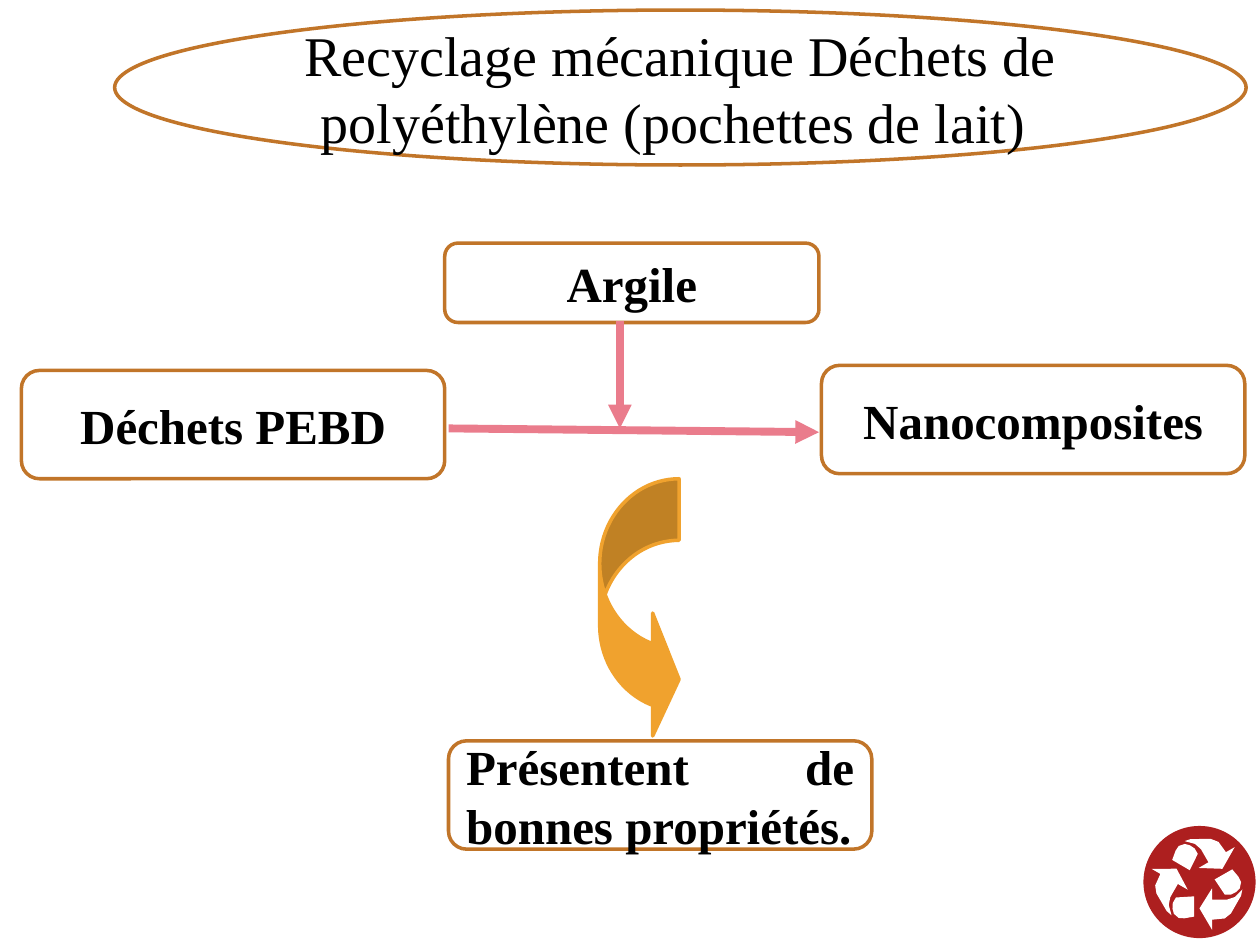
import math
from dataclasses import dataclass

import pptx
import pptx.dml.color
import pptx.enum.shapes
import pptx.enum.text
import pptx.oxml
import pptx.util
from pptx.util import Inches

SHAPE = pptx.enum.shapes.MSO_SHAPE
ALIGN = pptx.enum.text.PP_ALIGN


@dataclass(frozen=True)
class Theme:
    font: str = "Times New Roman"
    title_size: int = 32
    box_size: int = 28
    outline_width: float = 2
    arrow_width: float = 4.5
    text: str = "000000"
    paper: str = "FFFFFF"
    outline: str = "C17529"
    arrow: str = "EA7C8C"
    curve: str = "F0A22E"
    badge: str = "AD1F1F"


def rgb(value):
    return pptx.dml.color.RGBColor.from_string(value)


class SlideBuilder:
    def __init__(self, slide, theme):
        self.s = slide
        self.theme = theme

    def paint(self, sp, fill, line=None):
        sp.shadow.inherit = False
        sp.fill.solid()
        sp.fill.fore_color.rgb = rgb(fill)
        if line:
            sp.line.color.rgb = rgb(line)
            sp.line.width = pptx.util.Pt(self.theme.outline_width)
        else:
            sp.line.fill.background()
        return sp

    def shape(self, kind, x, y, w, h, fill, line=None):
        sp = self.s.shapes.add_shape(kind, Inches(x), Inches(y), Inches(w), Inches(h))
        return self.paint(sp, fill, line)

    def label(self, kind, x, y, w, h, text, size, bold=True, align=ALIGN.CENTER):
        sp = self.shape(kind, x, y, w, h, self.theme.paper, self.theme.outline)
        tf = sp.text_frame
        tf.word_wrap = True
        tf.vertical_anchor = pptx.enum.text.MSO_ANCHOR.MIDDLE
        p = tf.paragraphs[0]
        p.alignment = align
        r = p.add_run()
        r.text = text
        r.font.name = self.theme.font
        r.font.size = pptx.util.Pt(size)
        r.font.bold = bold
        r.font.color.rgb = rgb(self.theme.text)
        return sp

    def box(self, x, y, w, h, text, align=ALIGN.CENTER):
        return self.label(SHAPE.ROUNDED_RECTANGLE, x, y, w, h, text,
                          self.theme.box_size, align=align)

    def arrow(self, x1, y1, x2, y2):
        line = self.s.shapes.add_connector(
            pptx.enum.shapes.MSO_CONNECTOR.STRAIGHT,
            Inches(x1), Inches(y1), Inches(x2), Inches(y2))
        line.line.color.rgb = rgb(self.theme.arrow)
        line.line.width = pptx.util.Pt(self.theme.arrow_width)
        ns = 'xmlns:a="http://schemas.openxmlformats.org/drawingml/2006/main"'
        line.line._get_or_add_ln().append(
            pptx.oxml.parse_xml(f'<a:tailEnd {ns} type="triangle"/>'))
        line._element.spPr.append(pptx.oxml.parse_xml(f'<a:effectLst {ns}/>'))
        return line

    def polygon(self, points, fill):
        start, *rest = [(Inches(x), Inches(y)) for x, y in points]
        builder = self.s.shapes.build_freeform(*start)
        builder.add_line_segments(rest, close=True)
        return self.paint(builder.convert_to_shape(), fill)

    def recycling_badge(self, cx, cy, diameter):
        self.shape(SHAPE.OVAL, cx - diameter / 2, cy - diameter / 2,
                   diameter, diameter, self.theme.badge)
        # One arrow and its fold, relative to the centre, turned three times
        head = [(0, .21), (.1, .05), (.1, .14), (.16, .14), (.22, .14), (.28, .12),
                (.34, .06), (.33, .11), (.29, .18), (.25, .25), (.2, .29), (.1, .3),
                (.1, .38)]
        fold = [(.12, -.02), (.26, -.1), (.31, -.04), (.33, 0), (.32, .05),
                (.29, .08), (.25, .1), (.2, .1)]
        for turn in range(3):
            c, s = math.cos(turn * math.tau / 3), math.sin(turn * math.tau / 3)
            for part in (head, fold):
                self.polygon([(cx + x * c - y * s, cy + x * s + y * c)
                              for x, y in part], self.theme.paper)


def main():
    prs = pptx.Presentation()
    prs.slide_width, prs.slide_height = Inches(10), Inches(7.5)
    theme = Theme()
    b = SlideBuilder(prs.slides.add_slide(prs.slide_layouts[6]), theme)

    # Title
    b.label(SHAPE.OVAL, 0.91, 0.08, 8.98, 1.23,
            "Recyclage mécanique Déchets de polyéthylène (pochettes de lait) ",
            theme.title_size, bold=False)

    # Materials and product
    b.box(0.17, 2.94, 3.36, 0.86, "Déchets PEBD")
    b.box(3.53, 1.93, 2.97, 0.63, "Argile")
    b.box(6.52, 2.9, 3.36, 0.86, "Nanocomposites")
    b.box(3.56, 5.88, 3.36, 0.86, "Présentent de bonnes propriétés.", ALIGN.JUSTIFY)

    # Process arrows
    b.arrow(3.56, 3.4, 6.5, 3.43)
    b.arrow(4.92, 2.55, 4.92, 3.4)

    # Curved arrow to the result
    curve = b.shape(SHAPE.CURVED_RIGHT_ARROW, 4.76, 3.8, 0.63, 2.08,
                    theme.curve, theme.curve)
    for i, value in enumerate((0.775, 1.549, 0.333)):
        curve.adjustments[i] = value

    # Recycling symbol
    b.recycling_badge(9.52, 7, 0.89)

    prs.save("out.pptx")


if __name__ == "__main__":
    main()
